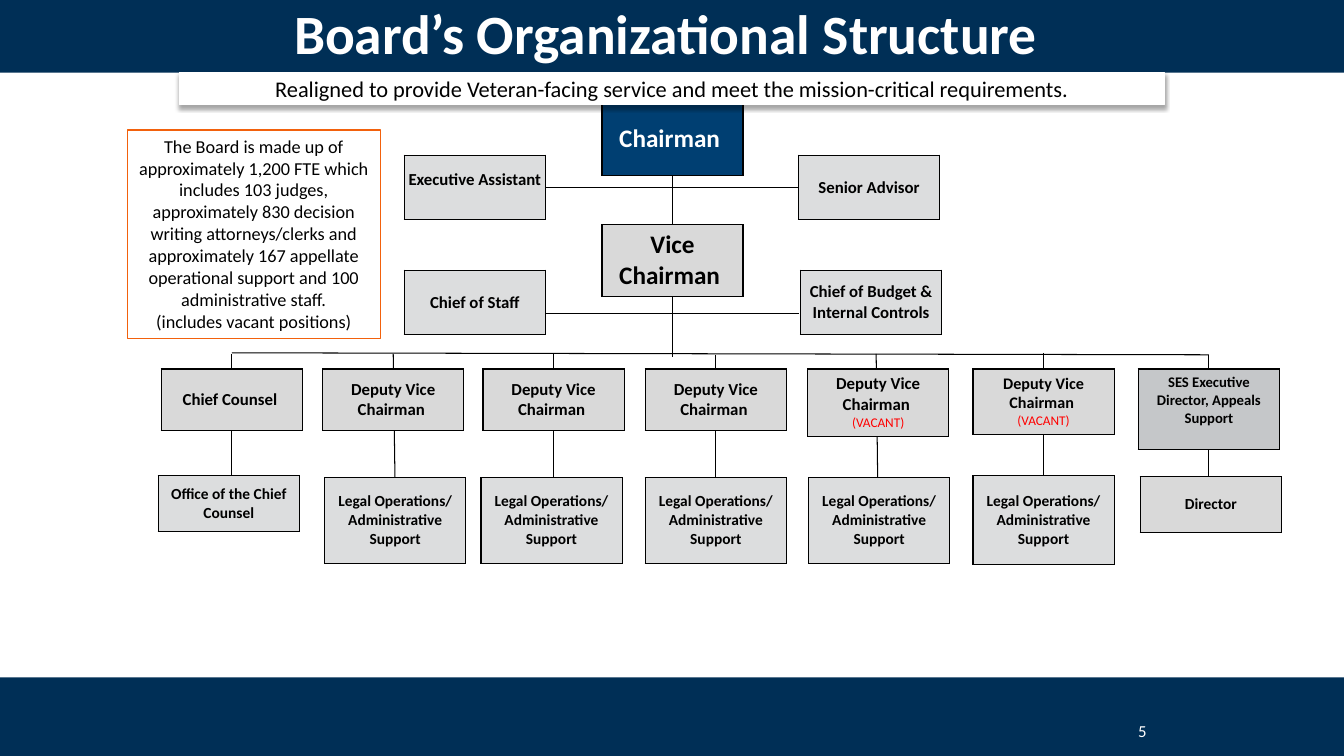
from lxml import etree
from pptx import Presentation
from pptx.dml.color import RGBColor
from pptx.enum.shapes import MSO_CONNECTOR, MSO_SHAPE
from pptx.enum.text import MSO_ANCHOR, PP_ALIGN
from pptx.oxml import parse_xml
from pptx.oxml.ns import nsdecls, qn
from pptx.util import Inches, Pt

RECTANGLE = MSO_SHAPE.RECTANGLE
STRAIGHT = MSO_CONNECTOR.STRAIGHT
TOP, MIDDLE = MSO_ANCHOR.TOP, MSO_ANCHOR.MIDDLE
LEFT, CENTER = PP_ALIGN.LEFT, PP_ALIGN.CENTER

COLORS = {
    "navy": "002F56", "blue": "003F72", "white": "FFFFFF", "black": "000000",
    "head": "D9D9D9", "office": "DCDDDE", "director": "C5C7C9",
    "orange": "F2610C", "red": "FF0000",
}
FONT = "Calibri"
SLIDE_WIDTH, SLIDE_HEIGHT = 13.33, 7.5
BAND_HEIGHT = 0.8
HEADER_TOP, FOOTER_TOP = -0.08, 6.72
BOX_WIDTH = 1.4
HEAD_TOP = 3.66
CENTER_X = 6.67

# Cell insets: left, top, right, bottom
WIDE = (0.1, 0.05, 0.1, 0.05)
NARROW = (0.05, 0, 0.05, 0)
NONE = (0, 0, 0, 0)
RAISED = (0, 0, 0, 0.15)

TITLE = "Board’s Organizational Structure "
BANNER = "Realigned to provide Veteran-facing service and meet the mission-critical requirements."
NOTE = [
    "The Board is made up of approximately 1,200 FTE which includes 103 judges, "
    "approximately 830 decision writing attorneys/clerks and approximately 167 "
    "appellate operational support and 100 administrative staff.",
    "(includes vacant positions)",
]
PAGE_NUMBER = "5"

# Text, left, top, height, size, fill, text colour, insets
LEADERS = [
    ("Chairman ", 5.97, 1.02, 0.72, 18, "blue", "white", WIDE),
    ("Vice Chairman ", 5.97, 2.23, 0.7, 18, "head", "black", WIDE),
    ("Executive Assistant", 4.01, 1.54, 0.64, 12, "office", "black", RAISED),
    ("Senior Advisor", 7.92, 1.54, 0.64, 12, "office", "black", NONE),
    ("Chief of Staff", 4.01, 2.68, 0.64, 12, "office", "black", NONE),
    ("Chief of Budget & Internal Controls", 7.94, 2.68, 0.64, 12, "office", "black", NONE),
]

DEPUTY = "Deputy Vice Chairman "
VACANT = "(VACANT)"
LEGAL = "Legal Operations/ Administrative Support"

# Text, vacancy, left, height, size, fill, anchor
HEADS = [
    ("Chief Counsel ", "", 1.6, 0.61, 12, "head", MIDDLE),
    (DEPUTY, "", 3.2, 0.61, 12, "head", MIDDLE),
    (DEPUTY, "", 4.79, 0.61, 12, "head", MIDDLE),
    (DEPUTY, "", 6.4, 0.61, 12, "head", MIDDLE),
    (DEPUTY, VACANT, 8.01, 0.66, 12, "head", MIDDLE),
    (DEPUTY, VACANT, 9.65, 0.64, 11.5, "head", MIDDLE),
    ("SES Executive Director, Appeals Support", "", 11.29, 0.8, 10.5, "director", TOP),
]
# Text, left, top, height, fill, insets
OFFICES = [
    ("Office of the Chief Counsel", 1.57, 4.72, 0.55, "office", NONE),
    (LEGAL, 3.22, 4.74, 0.85, "office", NARROW),
    (LEGAL, 4.77, 4.74, 0.85, "office", NARROW),
    (LEGAL, 6.4, 4.74, 0.85, "office", NARROW),
    (LEGAL, 8.02, 4.74, 0.85, "office", NARROW),
    (LEGAL, 9.65, 4.72, 0.88, "office", NARROW),
    ("Director", 11.31, 4.73, 0.55, "head", WIDE),
]
# Start x, start y, end x, end y
LINES = [
    (2.3, 3.51, 2.3, 5.03), (3.9, 3.51, 3.92, 4.91), (5.49, 3.51, 5.49, 5.4),
    (7.1, 3.52, 7.1, 5.31), (8.69, 3.51, 8.71, 5.15), (10.35, 3.5, 10.35, 5),
    (11.99, 3.52, 11.99, 5.27),
    (2.3, 3.5, 11.99, 3.52),
    (CENTER_X, 1.75, CENTER_X, 2.23), (CENTER_X, 2.83, CENTER_X, 3.54),
    (5.41, 1.86, 7.92, 1.86), (5.42, 3.11, 7.92, 3.11),
]


def rgb(name):
    return RGBColor.from_string(COLORS[name])


def write(frame, lines, align=CENTER):
    """Fill a text frame with (text, size, colour, bold) lines, one paragraph each."""
    for index, (text, size, color, bold) in enumerate(lines):
        para = frame.add_paragraph() if index else frame.paragraphs[0]
        para.alignment = align
        span = para.add_run()
        span.text = text
        span.font.name = FONT
        span.font.size = Pt(size)
        span.font.bold = bold
        span.font.color.rgb = rgb(color)


def add_box(page, left, top, width, height, fill=None, line=None):
    box = page.shapes.add_shape(
        RECTANGLE, Inches(left), Inches(top), Inches(width), Inches(height))
    box.shadow.inherit = False
    if fill:
        box.fill.solid()
        box.fill.fore_color.rgb = rgb(fill)
    else:
        box.fill.background()
    if line:
        box.line.color.rgb = rgb(line)
        box.line.width = Pt(0.75)
    else:
        box.line.fill.background()
    return box


def add_line(page, *ends):
    line = page.shapes.add_connector(STRAIGHT, *[Inches(end) for end in ends])
    line.line.color.rgb = rgb("black")
    line.line.width = Pt(0.75)
    etree.SubElement(line._element.spPr, qn("a:effectLst"))


def add_position(page, left, top, height, fill, insets, lines, anchor=MIDDLE):
    """Add one chart position as a bordered one-cell table."""
    table = page.shapes.add_table(
        1, 1, Inches(left), Inches(top), Inches(BOX_WIDTH), Inches(height)).table
    table.first_row = table.horz_banding = False
    cell = table.cell(0, 0)
    cell.margin_left, cell.margin_top, cell.margin_right, cell.margin_bottom = [
        Inches(inset) for inset in insets]
    cell.vertical_anchor = anchor
    properties = cell._tc.get_or_add_tcPr()
    for side in ("lnL", "lnR", "lnT", "lnB"):
        properties.append(parse_xml(
            f'<a:{side} {nsdecls("a")} w="{Pt(1)}"><a:solidFill>'
            f'<a:srgbClr val="{COLORS["black"]}"/></a:solidFill></a:{side}>'))
    cell.fill.solid()
    cell.fill.fore_color.rgb = rgb(fill)
    write(cell.text_frame, lines)


def main():
    deck = Presentation()
    deck.slide_width, deck.slide_height = Inches(SLIDE_WIDTH), Inches(SLIDE_HEIGHT)
    page = deck.slides.add_slide(deck.slide_layouts[5])

    for top in (FOOTER_TOP, HEADER_TOP):
        add_box(page, 0, top, SLIDE_WIDTH, BAND_HEIGHT, "navy")
    title = page.shapes.title
    title.left, title.top = Inches(0), Inches(HEADER_TOP)
    title.width, title.height = Inches(SLIDE_WIDTH), Inches(BAND_HEIGHT)
    title.text_frame.vertical_anchor = MIDDLE
    write(title.text_frame, [(TITLE, 39.6, "white", True)])
    page.shapes._spTree.append(title._element)

    for ends in LINES:
        add_line(page, *ends)
    for text, left, top, height, size, fill, color, insets in LEADERS:
        add_position(page, left, top, height, fill, insets, [(text, size, color, True)])
    for text, vacancy, left, height, size, fill, anchor in HEADS:
        lines = [(text, size, "black", True)]
        if vacancy:
            lines.append((vacancy, 9.5, "red", False))
        add_position(page, left, HEAD_TOP, height, fill, WIDE, lines, anchor)
    for text, left, top, height, fill, insets in OFFICES:
        add_position(page, left, top, height, fill, insets, [(text, 11, "black", True)])

    banner = add_box(page, 1.78, 0.72, 9.77, 0.32, "white", "white")
    banner.text_frame.word_wrap = True
    banner.text_frame.vertical_anchor = MIDDLE
    write(banner.text_frame, [(BANNER, 16, "black", False)])
    effects = banner._element.spPr.find(qn("a:effectLst"))
    effects.append(parse_xml(
        f'<a:outerShdw {nsdecls("a")} blurRad="{Pt(3.1)}" dist="{Pt(1.8)}" dir="5400000" '
        f'rotWithShape="0"><a:srgbClr val="{COLORS["black"]}"><a:alpha val="35000"/>'
        '</a:srgbClr></a:outerShdw>'))

    note = add_box(page, 1.26, 1.29, 2.51, 2.07, line="orange")
    note.text_frame.word_wrap = True
    note.text_frame.vertical_anchor = TOP
    write(note.text_frame, [(text, 13, "black", False) for text in NOTE])

    number = page.shapes.add_textbox(Inches(11.19), Inches(7.1), Inches(0.29), Inches(0.3))
    write(number.text_frame, [(PAGE_NUMBER, 12, "white", False)], LEFT)

    deck.save("out.pptx")


if __name__ == "__main__":
    main()
